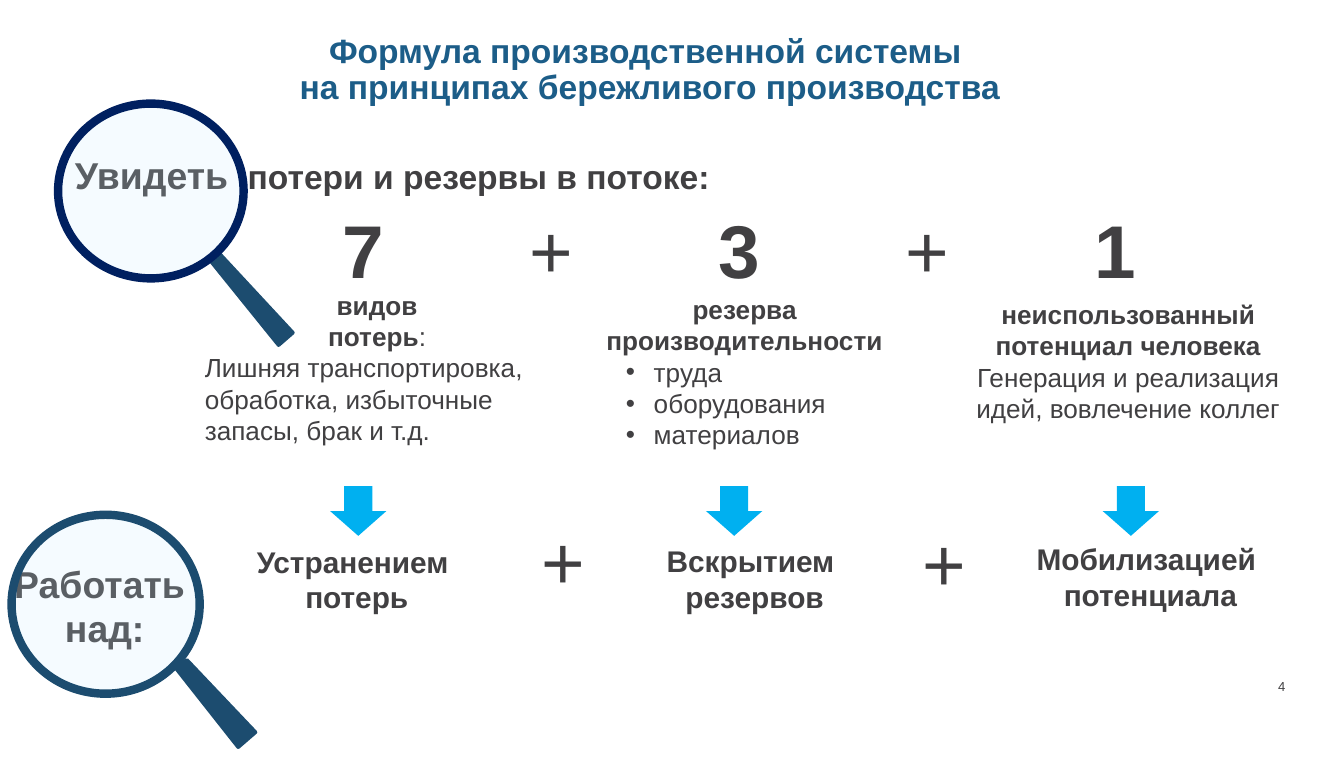
from lxml.etree import SubElement
from pptx import Presentation
from pptx.dml.color import RGBColor
from pptx.enum.shapes import MSO_SHAPE
from pptx.enum.text import MSO_ANCHOR, MSO_AUTO_SIZE, PP_ALIGN
from pptx.oxml.ns import qn
from pptx.util import Pt

LEFT, MID, RIGHT = PP_ALIGN.LEFT, PP_ALIGN.CENTER, PP_ALIGN.RIGHT


def paint(color, code):
    color.rgb = RGBColor.from_string(code)


class Board:
    font, ink, steel = "Arial", "414042", "1C4C6F"

    def __init__(self, slide):
        self.slide = slide

    def frame(self, shape, wrap=True, grow=True, inset=None, anchor=MSO_ANCHOR.TOP):
        text = shape.text_frame
        text.word_wrap = wrap
        text.auto_size = MSO_AUTO_SIZE.SHAPE_TO_FIT_TEXT if grow else MSO_AUTO_SIZE.NONE
        text.vertical_anchor = anchor
        if inset is not None:
            text.margin_left = text.margin_right = Pt(inset)
            text.margin_top = text.margin_bottom = Pt(inset)
        return text

    def para(self, text, words, size, bold=True, align=MID, color=None,
             indent=None, bullet=False, tabs=(), space=1.0):
        """Words are a string, or a list of (text, font settings) runs."""
        para = text.paragraphs[0]
        if para.runs:
            para = text.add_paragraph()
        if isinstance(words, str):
            para.text = words
        else:
            for part, style in words:
                run = para.add_run()
                run.text = part
                for key, value in style.items():
                    setattr(run.font, key, value)
        props = para._p.get_or_add_pPr()
        if indent is not None:
            props.set("marL", str(Pt(indent)))
            props.set("indent", str(Pt(-15 if bullet else 0)))
            if bullet:
                SubElement(props, qn("a:buFont")).set("typeface", "Arial")
                SubElement(props, qn("a:buChar")).set("char", "•")
            else:
                SubElement(props, qn("a:buNone"))
        if tabs:
            stops = SubElement(props, qn("a:tabLst"))
            for stop in tabs:
                tab = SubElement(stops, qn("a:tab"))
                tab.set("pos", str(Pt(stop)))
                tab.set("algn", "l")
        para.alignment, para.line_spacing = align, space
        para.space_before = para.space_after = Pt(0)
        font = para.font
        font.name, font.size, font.bold = self.font, Pt(size), bold
        paint(font.color, color or self.ink)

    def text(self, box, **style):
        return self.frame(self.slide.shapes.add_textbox(*map(Pt, box)), **style)

    def holder(self, shape, box, **style):
        shape.left, shape.top, shape.width, shape.height = map(Pt, box)
        return self.frame(shape, **style)

    def label(self, box, words, size, **style):
        self.para(self.text(box, wrap=False), words, size, **style)

    def shape(self, kind, box, fill, line=None, width=0, turn=0):
        shape = self.slide.shapes.add_shape(kind, *map(Pt, box))
        shape.shadow.inherit = False
        shape.rotation = turn
        shape.fill.solid()
        paint(shape.fill.fore_color, fill)
        if line:
            paint(shape.line.color, line)
            shape.line.width = Pt(width)
        else:
            shape.line.fill.background()
        return shape

    def lens(self, grip, ring, rim):
        """Magnifier: tilted handle and a see-through glass."""
        handle = self.shape(MSO_SHAPE.FLOWCHART_MANUAL_OPERATION, grip,
                            self.steel, self.steel, 2, 139.1)
        handle._element.spPr.find(qn("a:xfrm")).set("flipH", "1")
        glass = self.shape(MSO_SHAPE.OVAL, ring, "CCECFF", rim, 4.5)
        color = glass._element.spPr.find(qn("a:solidFill"))[0]
        SubElement(color, qn("a:alpha")).set("val", "18000")


def main():
    deck = Presentation()
    deck.slide_width, deck.slide_height = Pt(720), Pt(405.38)
    slide = deck.slides.add_slide(deck.slide_layouts[1])
    board = Board(slide)
    plain = {"bold": False}

    # Title and page number
    title = board.holder(slide.shapes.title, (82.2, 18.3, 532, 46), grow=False, inset=0)
    board.para(title, "Формула производственной системы \n"
               "на принципах бережливого производства", 18, color="1C5D88", space=0.9)
    page = board.text((644.6, 360.7, 44, 10.8), grow=False, inset=0,
                      anchor=MSO_ANCHOR.BOTTOM)
    board.para(page, "4", 7, bold=False, align=RIGHT)

    # Headings under the magnifiers
    board.label((0, 296.8, 112.3, 55.4), "Работать \nнад:", 20)
    head = board.text((33.1, 77.8, 365, 31.7))
    board.para(head, [("Увидеть\t", {}),
                      ("потери и резервы в потоке:", {"size": Pt(18)})],
               20, align=LEFT, tabs=[92.5])

    # Formula 7 + 3 + 1
    sums = board.text((176.4, 105.8, 527, 55.4))
    board.para(sums, [("7\t", {}), ("+\t", plain), ("3\t", {}), ("+\t", plain), ("1", {})],
               40, align=LEFT, tabs=[100, 201.3, 301.4, 402.6])

    # Losses
    loss = board.text((88.6, 151.2, 226.8, 92.2))
    board.para(loss, "видов", 14)
    board.para(loss, [("потерь", {}), (":", plain)], 14)
    board.para(loss, "Лишняя транспортировка, обработка, избыточные запасы, брак и т.д.",
               14, bold=False, align=LEFT, indent=14)

    # Reserves
    stock = board.holder(slide.placeholders[1], (315, 153.4, 167.8, 92.2))
    board.para(stock, "резерва производительности", 14, indent=0)
    for item in ("труда", "оборудования", "материалов"):
        board.para(stock, item, 14, bold=False, align=LEFT, indent=28, bullet=True)

    # Human potential
    human = board.text((509, 156.2, 190.8, 74.9))
    board.para(human, "неиспользованный потенциал человека", 14)
    board.para(human, "Генерация и реализация идей, вовлечение коллег", 14, bold=False)

    # Arrows and the goals below them
    goals = [
        (178.6, (129.6, 287.4, 123.1, 46), "Устранением \nпотерь"),
        (380, (349.2, 286.9, 110.2, 46), "Вскрытием \nрезервов"),
        (592.5, (547.2, 286.1, 138.2, 46), "Мобилизацией \nпотенциала"),
    ]
    for left, box, words in goals:
        board.shape(MSO_SHAPE.RIGHT_ARROW, (left, 258.6, 26.6, 30.2), "00B0F0", turn=90)
        board.label(box, words, 16)
    for left, top in ((283, 272.2), (487.4, 273)):
        board.label((left, top, 38.2, 55.4), "+", 40, bold=False, align=LEFT)

    # Magnifiers
    board.lens((108.7, 349.3, 12.2, 53.3), (6.2, 275.7, 100.8, 95.8), board.steel)
    board.lens((128.9, 130.3, 10.1, 58.3), (31.1, 55.5, 99.4, 93.6), "002060")

    deck.save("out.pptx")


if __name__ == "__main__":
    main()
